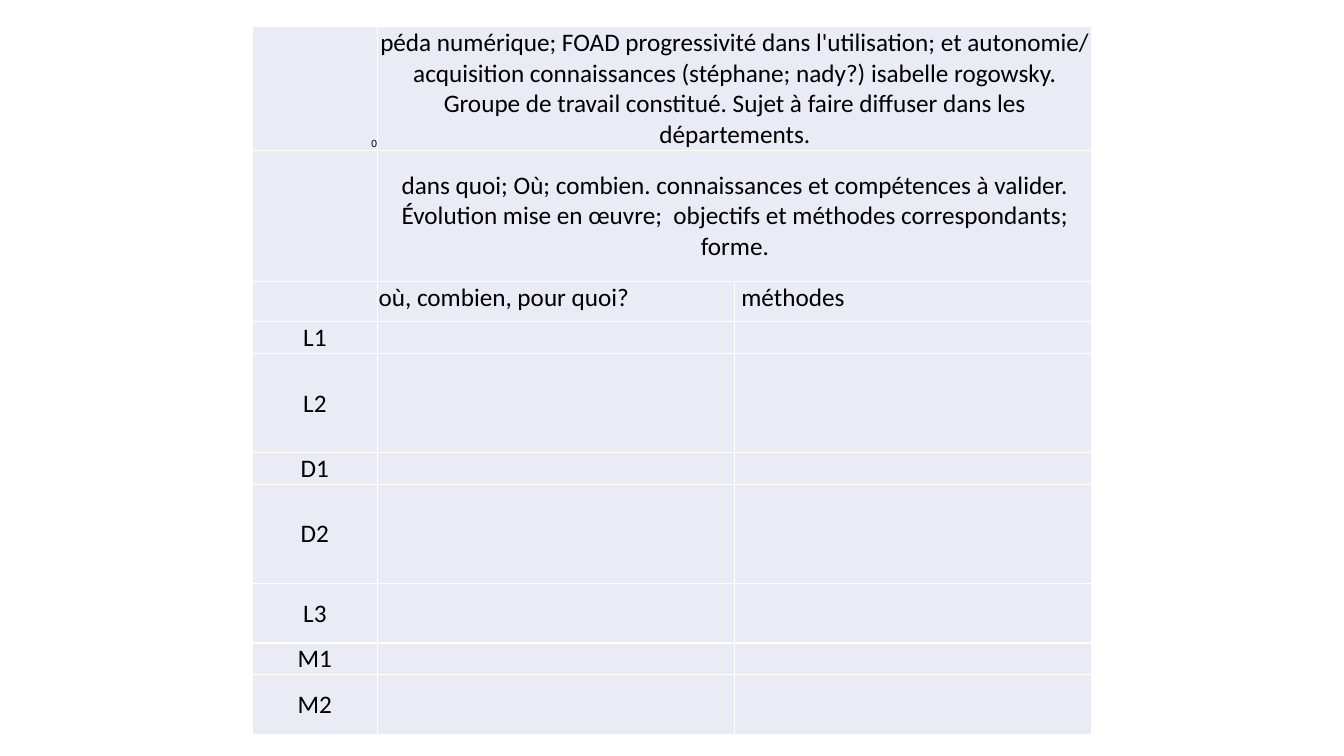
from lxml import etree
from pptx import Presentation
from pptx.dml.color import RGBColor
from pptx.enum.text import MSO_ANCHOR, PP_ALIGN
from pptx.oxml.ns import qn
from pptx.util import Cm, Pt

LEFT, CENTER, RIGHT = PP_ALIGN.LEFT, PP_ALIGN.CENTER, PP_ALIGN.RIGHT
TOP, MIDDLE, BOTTOM = MSO_ANCHOR.TOP, MSO_ANCHOR.MIDDLE, MSO_ANCHOR.BOTTOM

FONT, BLACK, WHITE, PALE = "Calibri", "000000", "FFFFFF", "E9EBF5"
COLS = [3.17, 9, 9]
INTRO_ROWS = [3.1, 3.3, 1.02]
LEVELS = [("L1", 0.78), ("L2", 2.5), ("D1", 0.78), ("D2", 2.5),
          ("L3", 1.5), ("M1", 0.78), ("M2", 1.5)]
SUBJECT = ("péda numérique; FOAD progressivité dans l'utilisation; et autonomie/ "
           "acquisition connaissances (stéphane; nady?) isabelle rogowsky. "
           "Groupe de travail constitué. Sujet à faire diffuser dans les départements.")
SCOPE = ("dans quoi; Où; combien. connaissances et compétences à valider. "
         "Évolution mise en œuvre;  objectifs et méthodes correspondants; forme.")


def rgb(value):
    """Turn a hex string into a colour."""
    return RGBColor.from_string(value)


def write(cell, text, size=18, align=CENTER, anchor=MIDDLE):
    """Put formatted text in a cell."""
    cell.vertical_anchor = anchor
    p = cell.text_frame.paragraphs[0]
    p.alignment = align
    r = p.add_run()
    r.text = text
    r.font.size = Pt(size)
    r.font.name = FONT
    r.font.color.rgb = rgb(BLACK)


def format_cell(cell):
    """Give a cell its thin margins, white borders and pale fill."""
    cell.margin_left = cell.margin_right = cell.margin_top = Cm(0.02)
    cell.margin_bottom = 0
    tc_pr = cell._tc.get_or_add_tcPr()
    for side in ("a:lnL", "a:lnR", "a:lnT", "a:lnB"):
        ln = etree.SubElement(tc_pr, qn(side), w=str(Pt(1)))
        fill = etree.SubElement(ln, qn("a:solidFill"))
        etree.SubElement(fill, qn("a:srgbClr"), val=WHITE)
    cell.fill.solid()
    cell.fill.fore_color.rgb = rgb(PALE)


def add_level_table(s, left, top):
    """Draw the table of methods by level with its top left corner given."""
    heights = INTRO_ROWS + [height for _, height in LEVELS]
    table = s.shapes.add_table(len(heights), len(COLS), Cm(left), Cm(top),
                               Cm(sum(COLS)), Cm(sum(heights))).table
    table.first_row = table.horz_banding = False
    for column, width in zip(table.columns, COLS):
        column.width = Cm(width)
    for row, height in zip(table.rows, heights):
        row.height = Cm(height)
        for cell in row.cells:
            format_cell(cell)

    write(table.cell(0, 0), "0", size=8, align=RIGHT, anchor=BOTTOM)
    for i, text in enumerate((SUBJECT, SCOPE)):
        table.cell(i, 1).merge(table.cell(i, 2))
        write(table.cell(i, 1), text)
    for j, text in enumerate(("où, combien, pour quoi?", " méthodes"), 1):
        write(table.cell(2, j), text, align=LEFT, anchor=TOP)
    for i, (level, _) in enumerate(LEVELS, len(INTRO_ROWS)):
        write(table.cell(i, 0), level)


def main():
    """Build and save the slide."""
    prs = Presentation()
    prs.slide_width, prs.slide_height = Cm(33.87), Cm(19.05)
    s = prs.slides.add_slide(prs.slide_layouts[6])
    add_level_table(s, 6.35, 0.67)
    prs.save("out.pptx")


if __name__ == "__main__":
    main()
